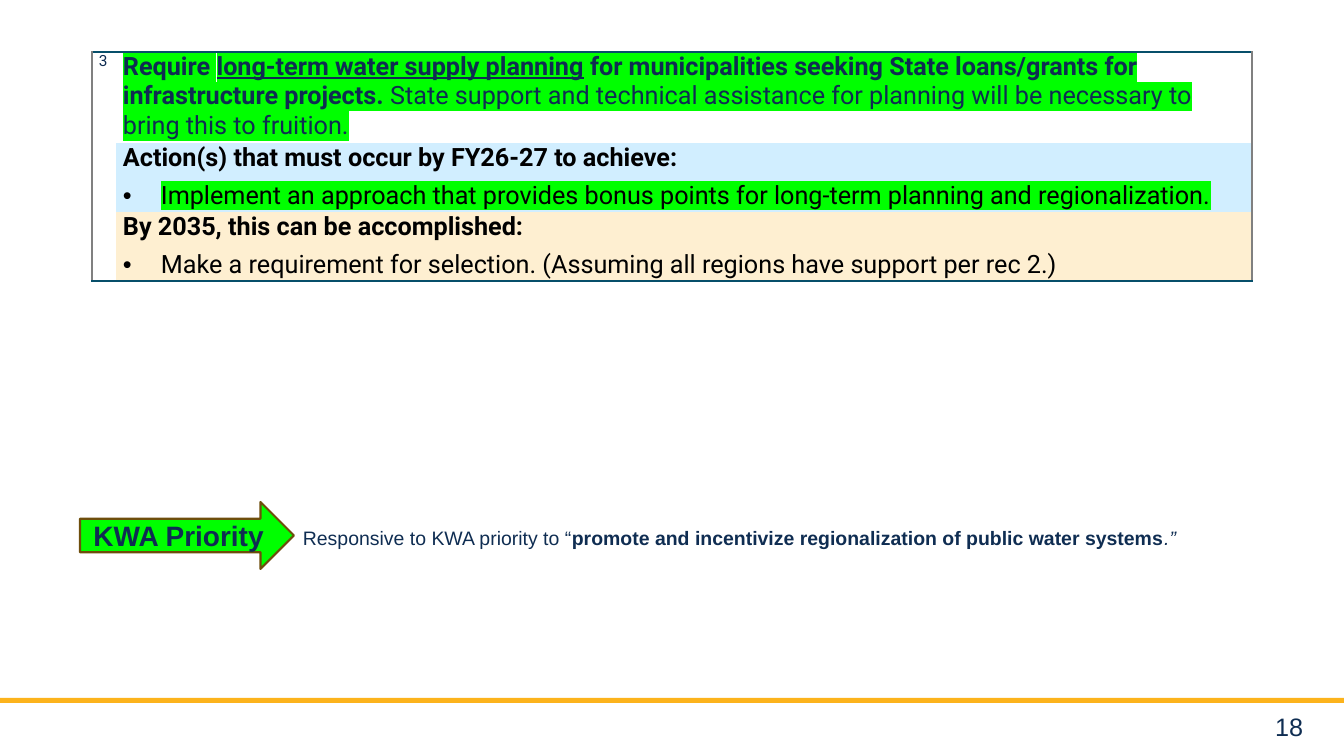
import pptx
import pptx.util
import pptx.dml.color
import pptx.enum.shapes
import pptx.enum.text
from lxml import etree
from pptx.oxml.ns import qn

PX = 9071  # EMU per px
COLORS = {"navy": "0F2D52", "black": "000000", "green": "00FF00", "gold": "FCB31C",
          "brown": "6E4E0C", "teal": "074F6A", "grey": "808080",
          "blue": "D1EEFF", "cream": "FEEFD1"}

# A run is (text, styles): b bold, i italic, u underline, h highlight
NUMBER = "3"
ROWS = [
    {"height": 89, "fill": None, "color": "navy", "paragraphs": [
        [("Require ", "bh"), ("long-term water supply planning", "buh"),
         (" for municipalities seeking State loans/grants for infrastructure projects. ", "bh"),
         ("State support and technical assistance for planning will be necessary to "
          "bring this to fruition.", "h")]]},
    {"height": 67, "fill": "blue", "color": "black", "paragraphs": [
        [("Action(s) that must occur by FY26-27 to achieve:", "b")],
        [("Implement an approach that provides bonus points for long-term planning "
          "and regionalization.", "h")]]},
    {"height": 68, "fill": "cream", "color": "black", "paragraphs": [
        [("By 2035, this can be accomplished:", "b")],
        [("Make a requirement for selection. (Assuming all regions have support per rec 2.)", "")]]},
]
COLUMNS = [24, 1136]
PRIORITY = "KWA Priority"
RESPONSE = [("Responsive to KWA priority to “", ""),
            ("promote and incentivize regionalization of public water systems", "b"),
            (".”", "i")]
PAGE = "18"


def px(*lengths):
    return [pptx.util.Emu(n * PX) for n in lengths]


def rgb(name):
    return pptx.dml.color.RGBColor.from_string(COLORS[name])


def add_run(p, text, size, styles="", font="Arial", color="navy"):
    r = p.add_run()
    r.text = text
    f = r.font
    f.size = pptx.util.Pt(size)
    f.bold, f.italic, f.underline = "b" in styles, "i" in styles, "u" in styles
    f.color.rgb = rgb(color)
    if "h" in styles:
        highlight = etree.Element(qn("a:highlight"))
        etree.SubElement(highlight, qn("a:srgbClr"), val=COLORS["green"])
        r._r.rPr.find(qn("a:solidFill")).addnext(highlight)
    f.name = font
    return r


def add_bullet(p):
    pPr = p._p.get_or_add_pPr()
    pPr.set("marL", str(38 * PX))
    pPr.set("indent", str(-38 * PX))
    etree.SubElement(pPr, qn("a:buFont"), typeface="Arial")
    etree.SubElement(pPr, qn("a:buChar"), char="•")


def add_border(cell, side, color, width):
    ln = etree.SubElement(cell._tc.get_or_add_tcPr(), qn("a:ln" + side),
                          w=str(pptx.util.Pt(width)))
    fill = etree.SubElement(ln, qn("a:solidFill"))
    etree.SubElement(fill, qn("a:srgbClr"), val=COLORS[color])


def add_block(slide, kind, box, fill, line=None):
    sp = slide.shapes.add_shape(kind, *px(*box))
    sp.shadow.inherit = False
    sp.fill.solid()
    sp.fill.fore_color.rgb = rgb(fill)
    if line:
        sp.line.color.rgb = rgb(line)
        sp.line.width = pptx.util.Pt(1.5)
    else:
        sp.line.fill.background()
    return sp


def add_text(slide, box):
    tf = slide.shapes.add_textbox(*px(*box)).text_frame
    tf.word_wrap = True
    return tf.paragraphs[0]


def add_recommendation(slide):
    heights = [row["height"] for row in ROWS]
    frame = slide.shapes.add_table(len(ROWS), len(COLUMNS),
                                   *px(92, 52, sum(COLUMNS), sum(heights)))
    table = frame.table
    table.first_row = table.horz_banding = False
    style = table._tbl.tblPr.find(qn("a:tableStyleId"))
    style.text = "{2D5ABB26-0587-4C30-8999-92F81FD0307C}"  # no style, no grid
    for column, width in zip(table.columns, px(*COLUMNS)):
        column.width = width
    for row, height in zip(table.rows, px(*heights)):
        row.height = height

    last = len(ROWS) - 1
    number = table.cell(0, 0)
    number.merge(table.cell(last, 0))
    for i, row in enumerate(ROWS):
        for j in range(len(COLUMNS)):
            cell = table.cell(i, j)
            cell.margin_left, cell.margin_right = px(7, 7)
            cell.margin_top = cell.margin_bottom = 0
            add_border(cell, "R" if j else "L", "grey", 1)
            if i == 0:
                add_border(cell, "T", "teal", 1.5)
            if i == last or cell.is_merge_origin:
                add_border(cell, "B", "teal", 1.5)
        if row["fill"]:
            cell.fill.solid()
            cell.fill.fore_color.rgb = rgb(row["fill"])
        else:
            cell.fill.background()
        tf = cell.text_frame
        for k, runs in enumerate(row["paragraphs"]):
            p = tf.add_paragraph() if k else tf.paragraphs[0]
            p.space_after = pptx.util.Pt(6)
            if k:
                add_bullet(p)
            for text, styles in runs:
                add_run(p, text, 18, styles, "Roboto", row["color"])
    number.fill.background()
    add_run(number.text_frame.paragraphs[0], NUMBER, 11, font="Roboto")


def main():
    prs = pptx.Presentation()
    prs.slide_width, prs.slide_height = px(1344, 756)
    slide = prs.slides.add_slide(prs.slide_layouts[6])
    shapes = pptx.enum.shapes.MSO_SHAPE
    align = pptx.enum.text.PP_ALIGN

    add_block(slide, shapes.RECTANGLE, (-18, 698, 1376, 5), "gold")
    p = add_text(slide, (1218, 706, 95, 35))
    p.alignment = align.RIGHT
    add_run(p, PAGE, 18)

    add_recommendation(slide)

    arrow = add_block(slide, shapes.RIGHT_ARROW, (80, 502, 214, 67), "green", "brown")
    tf = arrow.text_frame
    tf.vertical_anchor = pptx.enum.text.MSO_ANCHOR.MIDDLE
    p = tf.paragraphs[0]
    p.alignment = align.CENTER
    add_run(p, PRIORITY, 20, "b")

    p = add_text(slide, (293, 517, 1032, 50))
    for text, styles in RESPONSE:
        r = add_run(p, text, 24, styles)
        r._r.rPr.set("baseline", "30000")  # superscript

    prs.save("out.pptx")


if __name__ == "__main__":
    main()
